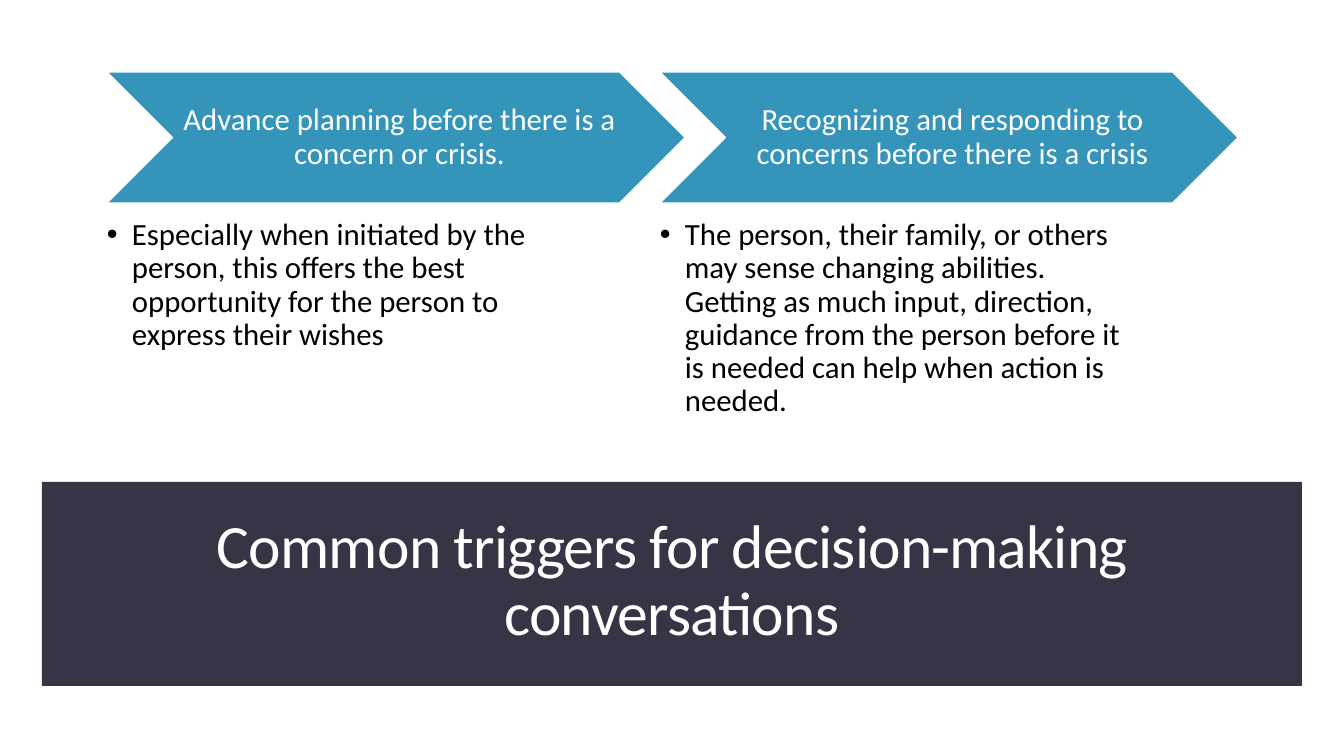
from dataclasses import dataclass

from lxml.etree import SubElement
from pptx import Presentation
from pptx.dml.color import RGBColor
from pptx.enum.shapes import MSO_SHAPE
from pptx.enum.text import MSO_ANCHOR, MSO_AUTO_SIZE, PP_ALIGN
from pptx.oxml.ns import qn
from pptx.util import Pt

EMU_PER_PX = 914400 / 100.8


@dataclass(frozen=True)
class Theme:
    font: str = "Calibri"
    white: RGBColor = RGBColor(0xFF, 0xFF, 0xFF)
    black: RGBColor = RGBColor(0, 0, 0)
    blue: RGBColor = RGBColor(0x34, 0x94, 0xBA)
    dark: RGBColor = RGBColor(0x37, 0x35, 0x45)
    title_size: int = 44
    body_size: int = 22


THEME = Theme()

TITLE = "Common triggers for decision-making conversations"
TRIGGERS = [
    ("Advance planning before there is a concern or crisis.",
     "Especially when initiated by the person, this offers the best "
     "opportunity for the person to express their wishes"),
    ("Recognizing and responding to concerns before there is a crisis",
     "The person, their family, or others may sense changing abilities. "
     "Getting as much input, direction, guidance from the person before it "
     "is needed can help when action is needed."),
]
FIRST_LEFT, COLUMN_STEP = 107, 553


def px(length):
    return round(length * EMU_PER_PX)


def place(left, top, width, height):
    return px(left), px(top), px(width), px(height)


def set_text(box, text, size, color, align, anchor, insets):
    """Fill a shape with one formatted paragraph and return it."""
    frame = box.text_frame
    frame.text = text
    frame.word_wrap = True
    frame.auto_size = MSO_AUTO_SIZE.NONE
    frame.vertical_anchor = anchor
    (frame.margin_left, frame.margin_top,
     frame.margin_right, frame.margin_bottom) = map(px, insets)
    para = frame.paragraphs[0]
    para.alignment = align
    para.line_spacing = 0.9
    span = para.runs[0]
    span.font.name = THEME.font
    span.font.size = Pt(size)
    span.font.color.rgb = color
    return para


def add_filled(page, kind, area, color):
    shape = page.shapes.add_shape(kind, *place(*area))
    shape.shadow.inherit = False
    shape.fill.solid()
    shape.fill.fore_color.rgb = color
    shape.line.fill.background()
    return shape


def add_title_band(page):
    band = add_filled(page, MSO_SHAPE.RECTANGLE, (42, 482, 1260, 204), THEME.dark)
    title = page.shapes.title
    title.left, title.top, title.width, title.height = place(61, 507, 1222, 150)
    para = set_text(title, TITLE, THEME.title_size, THEME.white,
                    PP_ALIGN.CENTER, MSO_ANCHOR.MIDDLE, (10, 5, 10, 5))
    # Slightly tightened letters
    para.runs[0].font._element.set("spc", "-60")
    # The band lies behind the title
    title._element.addprevious(band._element)


def add_chevron(page, left, heading):
    chevron = add_filled(page, MSO_SHAPE.CHEVRON, (left, 72, 578, 131), THEME.blue)
    chevron.line.color.rgb = THEME.white
    chevron.line.width = Pt(0.85)
    set_text(chevron, heading, THEME.body_size, THEME.white,
             PP_ALIGN.CENTER, MSO_ANCHOR.MIDDLE, (10, 3, 3, 3))


def add_bullet(page, left, detail):
    box = page.shapes.add_textbox(*place(left, 219, 462, 205))
    para = set_text(box, detail, THEME.body_size, THEME.black,
                    PP_ALIGN.LEFT, MSO_ANCHOR.TOP, (0, 0, 0, 0))
    properties = para._p.get_or_add_pPr()
    properties.set("marL", str(px(25)))
    properties.set("indent", str(px(-25)))
    SubElement(properties, qn("a:buFont")).set("typeface", "Arial")
    SubElement(properties, qn("a:buChar")).set("char", "•")


def main():
    deck = Presentation()
    deck.slide_width, deck.slide_height = px(1344), px(756)
    page = deck.slides.add_slide(deck.slide_layouts[5])

    # Title on the dark band
    add_title_band(page)

    # One chevron with its explanation per trigger
    for column, (heading, detail) in enumerate(TRIGGERS):
        left = FIRST_LEFT + column * COLUMN_STEP
        add_chevron(page, left, heading)
        add_bullet(page, left, detail)

    deck.save("out.pptx")


if __name__ == "__main__":
    main()
